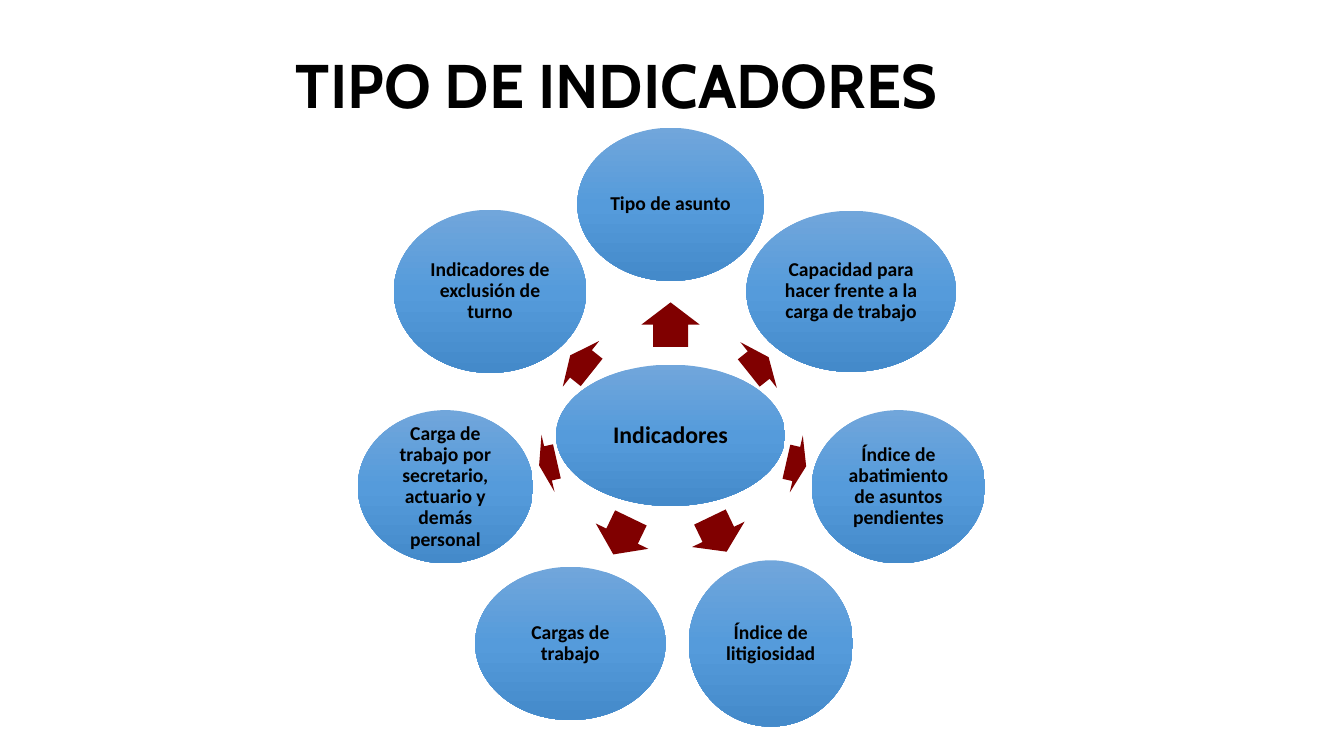
from copy import deepcopy
from dataclasses import dataclass
from math import cos, radians, sin

from pptx import Presentation
from pptx.dml.color import RGBColor
from pptx.enum.shapes import MSO_SHAPE
from pptx.enum.text import MSO_ANCHOR, PP_ALIGN
from pptx.oxml.ns import qn
from pptx.shapes.autoshape import Shape
from pptx.slide import Slide
from pptx.util import Cm, Pt

BLACK = RGBColor(0x00, 0x00, 0x00)
MAROON = RGBColor(0x80, 0x00, 0x00)
BLUE_STOPS = (
    (0, RGBColor(0x71, 0xA6, 0xDB)),
    (0.5, RGBColor(0x55, 0x9B, 0xDB)),
    (1, RGBColor(0x44, 0x8A, 0xCA)),
)

# Wheel geometry, in centimetres
HUB_X, HUB_Y = 16.9, 10.97
RING_RADIUS = 5.82
ARROW_BREADTH = 1.47

TITLE_FONT = {"name": "Cabin", "size": Pt(44), "bold": True}
HUB_FONT = {"name": "Calibri", "size": Pt(17), "bold": True}
INDICATOR_FONT = {"name": "Calibri", "size": Pt(14), "bold": True}
FRAME_FORMAT = {
    "word_wrap": True,
    "vertical_anchor": MSO_ANCHOR.MIDDLE,
    "margin_left": Cm(0.05),
    "margin_right": Cm(0.05),
    "margin_top": Cm(0.05),
    "margin_bottom": Cm(0.05),
}


@dataclass(frozen=True)
class Indicator:
    label: str
    width: float
    height: float
    arrow_distance: float
    arrow_length: float
    shift: float = 0


# Clockwise from the top
INDICATORS = (
    Indicator("Tipo de asunto", 4.7, 3.86, 2.79, 1.12),
    Indicator("Capacidad para hacer frente a la carga de trabajo", 5.28, 4.06, 2.84, 0.64),
    Indicator("Índice de abatimiento de asuntos pendientes", 4.37, 3.86, 3.25, 0.51, 0.07),
    Indicator("Índice de litigiosidad", 4.14, 4.19, 2.77, 0.97),
    Indicator("Cargas de trabajo", 4.8, 3.86, 2.82, 1.02),
    Indicator("Carga de trabajo por secretario, actuario y demás personal", 4.42, 3.86, 3.17, 0.46),
    Indicator("Indicadores de exclusión de turno", 4.85, 4.11, 2.89, 0.69),
)


def apply_format(target: object, values: dict) -> None:
    for attribute, value in values.items():
        setattr(target, attribute, value)


def write_label(shape: Shape, text: str, font_format: dict) -> None:
    apply_format(shape.text_frame, FRAME_FORMAT)
    paragraph = shape.text_frame.paragraphs[0]
    paragraph.text = text
    paragraph.alignment = PP_ALIGN.CENTER
    paragraph.line_spacing = 0.9
    apply_format(paragraph.font, font_format)
    paragraph.font.color.rgb = BLACK


def add_centred(slide: Slide, kind: MSO_SHAPE, x: float, y: float,
                width: float, height: float) -> Shape:
    shape = slide.shapes.add_shape(
        kind, Cm(x - width / 2), Cm(y - height / 2), Cm(width), Cm(height))
    shape.shadow.inherit = False
    shape.line.fill.background()
    return shape


def add_oval(slide: Slide, text: str, x: float, y: float,
             width: float, height: float, font_format: dict) -> None:
    oval = add_centred(slide, MSO_SHAPE.OVAL, x, y, width, height)
    oval.fill.gradient()
    oval.fill.gradient_angle = 270
    stop_list = next(oval.element.iter(qn("a:gsLst")))
    stop_list.append(deepcopy(stop_list[-1]))
    for stop, (position, color) in zip(oval.fill.gradient_stops, BLUE_STOPS):
        stop.position = position
        stop.color.rgb = color
    write_label(oval, text, font_format)


def add_arrow(slide: Slide, indicator: Indicator, angle: float) -> None:
    arrow = add_centred(
        slide, MSO_SHAPE.RIGHT_ARROW,
        HUB_X + indicator.arrow_distance * cos(radians(angle)),
        HUB_Y + indicator.arrow_distance * sin(radians(angle)),
        indicator.arrow_length, ARROW_BREADTH)
    arrow.adjustments[0] = 0.6
    arrow.adjustments[1] = 0.5
    arrow.rotation = angle % 360
    arrow.fill.solid()
    arrow.fill.fore_color.rgb = MAROON


def main() -> None:
    presentation = Presentation()
    presentation.slide_width = Cm(33.87)
    presentation.slide_height = Cm(19.05)
    slide = presentation.slides.add_slide(presentation.slide_layouts[5])

    # Title
    heading = slide.shapes.title
    apply_format(heading, {"left": Cm(4.75), "top": Cm(0.97),
                           "width": Cm(21.59), "height": Cm(2.54)})
    write_label(heading, "TIPO DE INDICADORES", TITLE_FONT)

    # Hub
    add_oval(slide, "Indicadores", HUB_X, HUB_Y, 5.77, 3.56, HUB_FONT)

    # Ring of indicators with their arrows
    for index, indicator in enumerate(INDICATORS):
        angle = index * 360 / len(INDICATORS) - 90
        add_arrow(slide, indicator, angle)
        add_oval(slide, indicator.label,
                 HUB_X + RING_RADIUS * cos(radians(angle)) + indicator.shift,
                 HUB_Y + RING_RADIUS * sin(radians(angle)),
                 indicator.width, indicator.height, INDICATOR_FONT)

    presentation.save("out.pptx")


if __name__ == "__main__":
    main()
